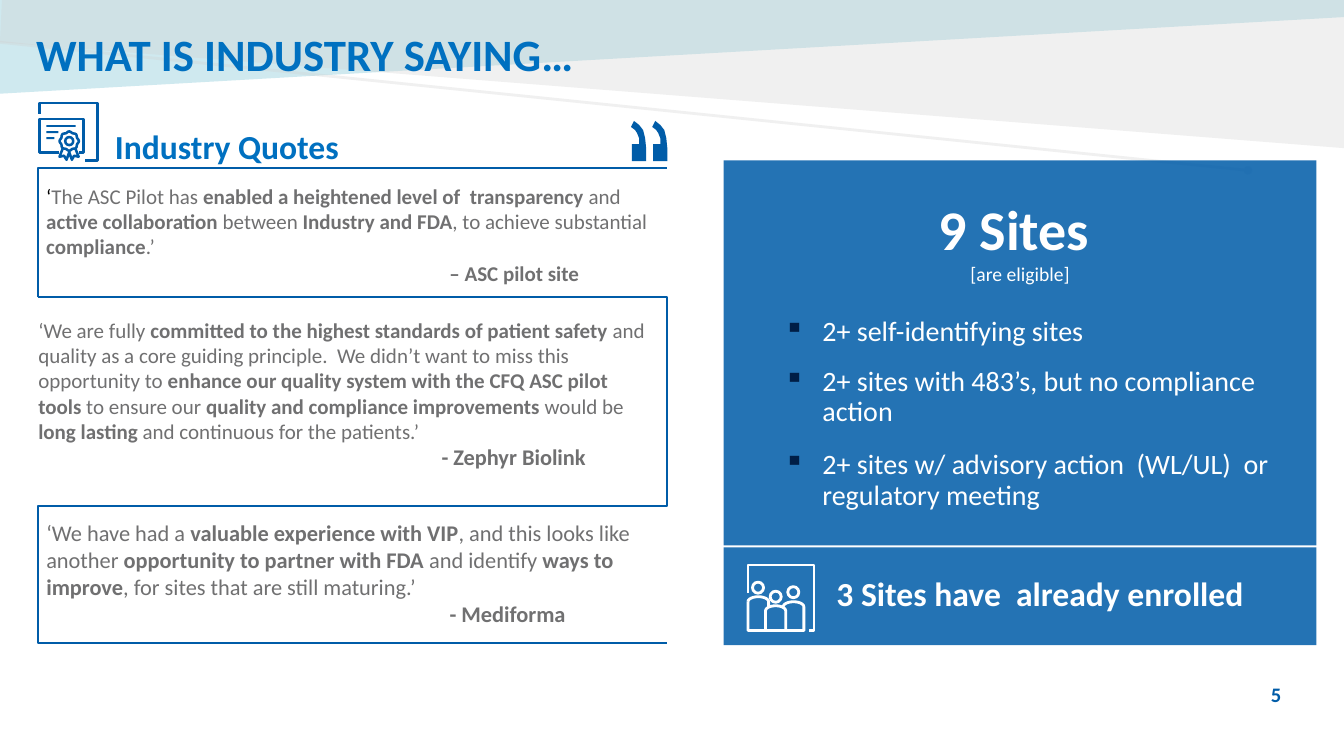
import dataclasses
import math

import pptx
import pptx.dml.color
import pptx.enum.shapes
import pptx.enum.text
import pptx.oxml
import pptx.oxml.ns
import pptx.util
from lxml import etree

RGB = pptx.dml.color.RGBColor
NAVY = RGB(0x00, 0x5C, 0xA8)
BLUE = RGB(0x00, 0x70, 0xC0)
INK = RGB(0x00, 0x1E, 0x46)
GRAY = RGB(0x70, 0x70, 0x71)
SILVER = RGB(0xD0, 0xD0, 0xD0)
AQUA = RGB(0x73, 0xC0, 0xD3)
WHITE = RGB(0xFF, 0xFF, 0xFF)
BLACK = RGB(0x00, 0x00, 0x00)

SHAPE = pptx.enum.shapes.MSO_SHAPE
ALIGN = pptx.enum.text.PP_ALIGN
ANCHOR = pptx.enum.text.MSO_ANCHOR
COLUMNS, ROWS = 133.33, 75  # square grid cells


@dataclasses.dataclass
class Line:
    """One paragraph; **double stars** switch bold on and off."""
    text: str
    size: float
    color: RGB = GRAY
    bold: bool = False
    align: int = ALIGN.LEFT
    before: float = 0
    spacing: float = 1.0
    indent: float = 0
    hanging: float = 0
    bullet: str = ""


class Sheet:
    font = "Calibri"
    cell = pptx.util.Inches(0.1)

    def __init__(self, deck):
        deck.slide_width = self.grid(COLUMNS)
        deck.slide_height = self.grid(ROWS)
        self.shapes = deck.slides.add_slide(deck.slide_layouts[6]).shapes

    def grid(self, *cells):
        lengths = [pptx.util.Emu(round(c * self.cell)) for c in cells]
        return lengths if len(lengths) > 1 else lengths[0]

    def paint(self, shape, fill=None, line=None, width=1.5, opacity=100):
        shape.shadow.inherit = False
        if fill is None:
            shape.fill.background()
        else:
            shape.fill.solid()
            shape.fill.fore_color.rgb = fill
        if line is None:
            shape.line.fill.background()
        else:
            shape.line.color.rgb = line
            shape.line.width = pptx.util.Pt(width)
        self.fade(shape, opacity)
        return shape

    def fade(self, shape, opacity):
        if opacity < 100:
            for color in shape._element.spPr.iter(pptx.oxml.ns.qn("a:srgbClr")):
                etree.SubElement(color, pptx.oxml.ns.qn("a:alpha"), val=str(opacity * 1000))

    def preset(self, kind, x, y, w, h, **paint):
        return self.paint(self.shapes.add_shape(kind, *self.grid(x, y, w, h)), **paint)

    def ring(self, x, y, radius, color, width):
        return self.preset(SHAPE.OVAL, x - radius, y - radius, 2 * radius, 2 * radius,
                           line=color, width=width)

    def outline(self, points, closed=False, **paint):
        start, *rest = [tuple(self.grid(*point)) for point in points]
        builder = self.shapes.build_freeform(*start, scale=1.0)
        builder.add_line_segments(rest, close=closed)
        return self.paint(builder.convert_to_shape(), **paint)

    def connector(self, start, end, color, width, opacity):
        link = self.shapes.add_connector(pptx.enum.shapes.MSO_CONNECTOR.STRAIGHT,
                                         *self.grid(*start, *end))
        link.line.color.rgb = color
        link.line.width = pptx.util.Pt(width)
        self.fade(link, opacity)
        etree.SubElement(link.line._get_or_add_ln(), pptx.oxml.ns.qn("a:headEnd"), type="oval")
        etree.SubElement(link._element.spPr, pptx.oxml.ns.qn("a:effectLst"))

    def textbox(self, x, y, w, h, lines, inset=True, anchor=ANCHOR.TOP):
        frame = self.shapes.add_textbox(*self.grid(x, y, w, h)).text_frame
        if not inset:
            frame.margin_left = frame.margin_right = 0
            frame.margin_top = frame.margin_bottom = 0
        return self.fill_text(frame, lines, anchor)

    def fill_text(self, frame, lines, anchor):
        frame.word_wrap = True
        frame.vertical_anchor = anchor
        for number, line in enumerate(lines):
            paragraph = frame.add_paragraph() if number else frame.paragraphs[0]
            paragraph.alignment = line.align
            paragraph.line_spacing = line.spacing
            paragraph.space_before = pptx.util.Pt(line.before)
            props = paragraph._p.get_or_add_pPr()
            props.set("marL", str(self.grid(line.indent)))
            props.set("indent", str(-self.grid(line.hanging)))
            if line.bullet:
                tint = etree.SubElement(props, pptx.oxml.ns.qn("a:buClr"))
                etree.SubElement(tint, pptx.oxml.ns.qn("a:srgbClr"), val=str(INK))
                etree.SubElement(props, pptx.oxml.ns.qn("a:buChar"), char=line.bullet)
            for part, words in enumerate(line.text.split("**")):
                if words:
                    run = paragraph.add_run()
                    run.text = words
                    run.font.name = self.font
                    run.font.size = pptx.util.Pt(line.size)
                    run.font.color.rgb = line.color
                    run.font.bold = line.bold or part % 2 == 1
        return frame


def arch(left, right, base, rise=0.5, steps=12):
    """Half an ellipse from left to right, standing on base."""
    middle, reach = (left + right) / 2, (right - left) / 2
    angles = [math.pi * step / steps for step in range(steps + 1)]
    return [(middle - reach * math.cos(a), base - rise * math.sin(a)) for a in angles]


def draw_backdrop(sheet):
    sheet.outline([(COLUMNS, 0), (0, 0), (0, 9.3), (COLUMNS, 1.7)], closed=True,
                  fill=AQUA, opacity=34)
    sheet.connector((123.8, 16.9), (0, 4.2), SILVER, 2, 30)
    sheet.outline([(0.2, 0), (COLUMNS, 0), (COLUMNS, 14.7), (0, 4.2)], closed=True,
                  fill=SILVER, opacity=30)


def draw_certificate(sheet):
    stroke = dict(line=NAVY, width=1.8)
    sheet.outline([(3.93, 11.3), (3.93, 10.2), (9.7, 10.2), (9.7, 15.9), (8.4, 15.9)], **stroke)
    sheet.outline([(5.9, 15.15), (3.93, 15.15), (3.93, 11.8), (8.27, 11.8),
                   (8.27, 15.15), (7.8, 15.15)], **stroke)
    sheet.outline([(6.2, 14.8), (5.9, 15.55), (6.35, 15.45), (6.6, 15.85), (6.87, 15.1),
                   (7.13, 15.85), (7.35, 15.45), (7.8, 15.55), (7.5, 14.8)], **stroke)
    turns = [math.tau * step / 48 for step in range(48)]
    rim = [(0.9 + 0.06 * math.cos(8 * t), t) for t in turns]
    sheet.outline([(6.87 + r * math.cos(t), 14 + r * math.sin(t)) for r, t in rim],
                  closed=True, **stroke)
    sheet.ring(6.87, 14, 0.4, NAVY, 1.8)
    for row, length in enumerate((2.9, 1.2, 0.8)):
        sheet.preset(SHAPE.RECTANGLE, 4.6, 12.4 + 0.6 * row, length, 0.2, fill=NAVY)


def draw_people(sheet):
    stroke = dict(line=WHITE, width=2)
    sheet.outline([(74.2, 58.8), (74.2, 56.05), (80.75, 56.05), (80.75, 62.55), (80.3, 62.55)],
                  **stroke)
    for x, y in ((75.2, 58.3), (76.95, 59.2), (78.7, 58.75)):
        sheet.ring(x, y, 0.55, WHITE, 2)
    sheet.outline([*arch(74.2, 76.25, 59.7), (76.25, 60.2)], **stroke)
    sheet.outline([(75.95, 62.55), *arch(75.95, 77.95, 60.6), (77.95, 62.55)], **stroke)
    sheet.outline([*arch(77.7, 79.75, 60.2), (79.75, 62.55), (74.2, 62.55), (74.2, 59.7)],
                  **stroke)


def draw_quotes(sheet):
    draw_certificate(sheet)
    sheet.textbox(11.4, 13.1, 46, 3.5, [Line("Industry Quotes", 24, BLUE, True, spacing=0.85)],
                  inset=False)

    # Quotation mark
    mark = [(0.3, 0), (0, 0.6), (0.4, 0.9), (0.6, 1.2), (0.8, 1.7), (0.8, 2.3), (0.1, 2.3),
            (0.1, 4), (1.5, 4), (1.5, 2.7), (1.4, 1.7), (1.2, 0.9), (0.8, 0.4)]
    for left in (62.6, 64.7):
        sheet.outline([(left + x, 12 + y) for x, y in mark], closed=True, fill=NAVY)

    # Frames, winding from side to side
    left, right = 3.8, 66.2
    first, second, third, end = 16.7, 29.5, 50.2, 63.8
    for frame in ([(left, second), (left, first), (right, first)],
                  [(left, third), (right, third), (right, second), (left, second)],
                  [(right, third), (left, third), (left, end), (right, end)]):
        sheet.outline(frame, line=NAVY, width=1.5)

    # Quotes with their speakers
    pilot = sheet.textbox(3.6, 17.7, 64.5, 11.3, [
        Line("‘****The ASC Pilot has **enabled a heightened level of  transparency **and "
             "**active collaboration **between **Industry and FDA**, to achieve substantial "
             "**compliance**.’", 15),
        Line("– ASC pilot site", 15, bold=True, before=1, indent=40)])
    pilot.paragraphs[0].runs[0].font.color.rgb = BLACK
    sheet.textbox(3.8, 31.5, 61.1, 5.4, [
        Line("‘We are fully **committed to the highest standards of patient safety **and quality "
             "as a core guiding principle.  We didn’t want to miss this opportunity to **enhance "
             "our quality system with the CFQ ASC pilot tools **to ensure our **quality and "
             "compliance improvements **would be **long lasting **and continuous for the "
             "patients.’", 15),
        Line("- Zephyr Biolink", 16, bold=True, indent=40)], inset=False)
    sheet.textbox(4.6, 51.5, 61.6, 8.6, [
        Line("‘We have had a **valuable experience with VIP**, and this looks like another "
             "**opportunity to partner with FDA **and identify **ways to improve**, for sites "
             "that are still maturing.’", 16),
        Line("- Mediforma", 16, bold=True, indent=40)], inset=False)


def draw_sites(sheet):
    # Eligible sites
    panel = sheet.preset(SHAPE.RECTANGLE, 71.8, 15.9, 58.8, 38.2, fill=NAVY, opacity=86)
    criteria = [("2+ self-identifying sites", 23),
                ("2+ sites with 483’s, but no compliance action", 14),
                ("2+ sites w/ advisory action  (WL/UL)  or regulatory meeting", 16.5)]
    sheet.fill_text(panel.text_frame, [
        Line("9 Sites ", 40, WHITE, True, ALIGN.CENTER),
        Line("[are eligible]", 14, WHITE, align=ALIGN.CENTER),
        *[Line(words, 20, WHITE, before=gap, spacing=0.9, indent=8.8, hanging=3.8, bullet="▪")
          for words, gap in criteria]], ANCHOR.MIDDLE)

    # Enrolled sites
    sheet.preset(SHAPE.RECTANGLE, 71.8, 54.3, 58.8, 9.7, fill=NAVY, opacity=86)
    sheet.textbox(82, 56.8, 47.3, 4.6,
                  [Line("3 Sites have  already enrolled", 24, WHITE, True, spacing=0.9)])
    draw_people(sheet)


def main():
    deck = pptx.Presentation()
    sheet = Sheet(deck)
    draw_backdrop(sheet)
    # Page number
    sheet.textbox(123.8, 67.4, 5.6, 3, [Line("5", 14.7, NAVY, True, ALIGN.CENTER)],
                  anchor=ANCHOR.MIDDLE)
    draw_sites(sheet)
    draw_quotes(sheet)
    # Title
    sheet.textbox(2.6, 2.2, 101.5, 6.4, [Line("WHAT IS INDUSTRY SAYING…", 32, BLUE, True)])
    deck.save("out.pptx")


if __name__ == "__main__":
    main()
